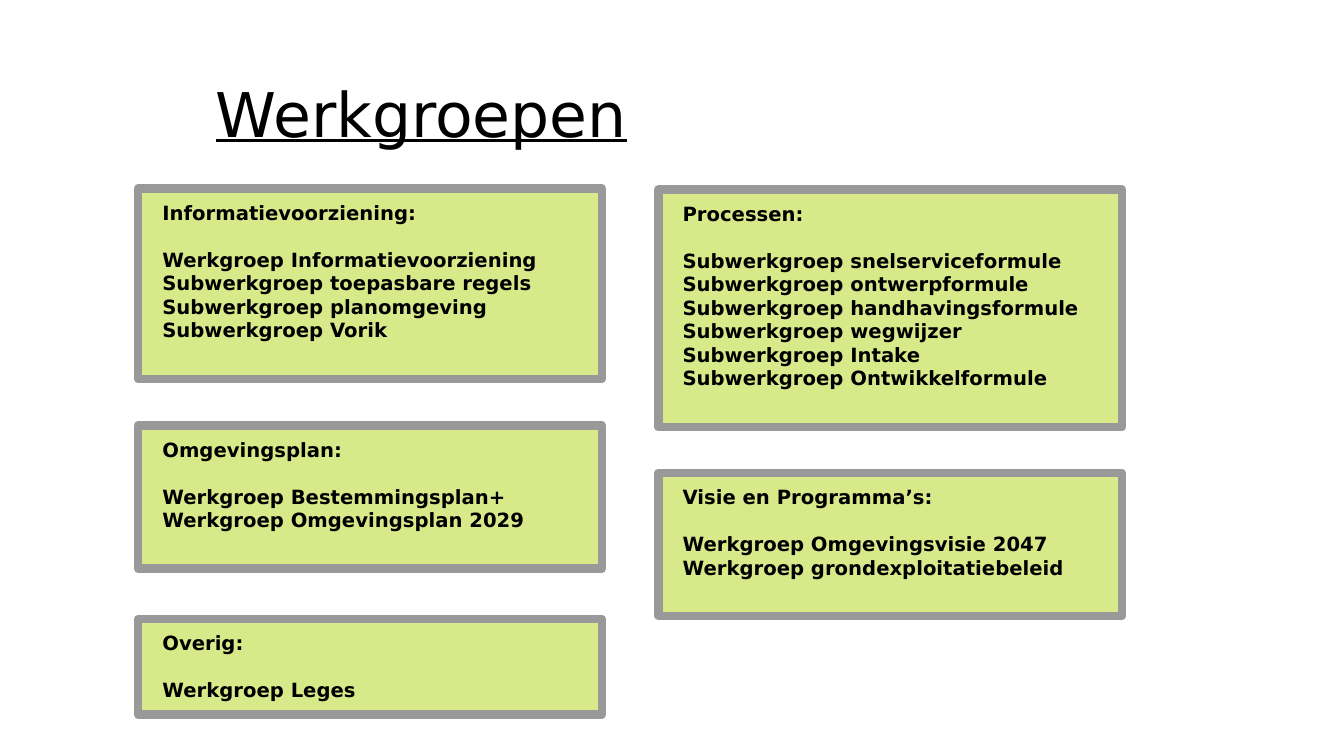
from dataclasses import dataclass

from pptx import Presentation
from pptx.dml.color import RGBColor
from pptx.enum.shapes import MSO_SHAPE
from pptx.enum.text import MSO_ANCHOR, PP_ALIGN
from pptx.util import Emu, Pt


@dataclass(frozen=True)
class Theme:
    font: str = "DejaVu Sans"
    text: RGBColor = RGBColor(0x00, 0x00, 0x00)
    fill: RGBColor = RGBColor(0xD8, 0xE9, 0x89)
    border: RGBColor = RGBColor(0x99, 0x99, 0x99)
    border_width: int = 6
    title_size: int = 44
    body_size: int = 14
    heading_gap: float = 16.8


THEME = Theme()
EMU_PER_PX = 9144
CARD_WIDTH = 460
LEFT_COLUMN, RIGHT_COLUMN = 137, 653

CARDS = [
    (LEFT_COLUMN, 187, 189, "Informatievoorziening:", [
        "Werkgroep Informatievoorziening",
        "Subwerkgroep toepasbare regels",
        "Subwerkgroep planomgeving",
        "Subwerkgroep Vorik",
    ]),
    (RIGHT_COLUMN, 188, 236, "Processen:", [
        "Subwerkgroep snelserviceformule",
        "Subwerkgroep ontwerpformule",
        "Subwerkgroep handhavingsformule",
        "Subwerkgroep wegwijzer",
        "Subwerkgroep Intake",
        "Subwerkgroep Ontwikkelformule",
    ]),
    (LEFT_COLUMN, 422, 142, "Omgevingsplan:", [
        "Werkgroep Bestemmingsplan+",
        "Werkgroep Omgevingsplan 2029",
    ]),
    (RIGHT_COLUMN, 469, 142, "Visie en Programma’s:", [
        "Werkgroep Omgevingsvisie 2047",
        "Werkgroep grondexploitatiebeleid",
    ]),
    (LEFT_COLUMN, 614, 95, "Overig:", ["Werkgroep Leges"]),
]


def px(length):
    return Emu(length * EMU_PER_PX)


def style_paragraph(paragraph, size, bold=False, underline=False):
    paragraph.alignment = PP_ALIGN.LEFT
    font = paragraph.font
    font.name = THEME.font
    font.size = Pt(size)
    font.bold = bold
    font.underline = underline
    font.color.rgb = THEME.text


def place_title(slide, left, top, width, height):
    title = slide.shapes.title
    title.left, title.top = px(left), px(top)
    title.width, title.height = px(width), px(height)
    title.text_frame.text = "Werkgroepen"
    title.text_frame.vertical_anchor = MSO_ANCHOR.MIDDLE
    style_paragraph(title.text_frame.paragraphs[0], THEME.title_size, underline=True)


def add_card(slide, left, top, width, height, heading, groups):
    card = slide.shapes.add_shape(
        MSO_SHAPE.RECTANGLE, px(left), px(top), px(width), px(height))
    card.shadow.inherit = False
    card.fill.solid()
    card.fill.fore_color.rgb = THEME.fill
    card.line.color.rgb = THEME.border
    card.line.width = Pt(THEME.border_width)

    frame = card.text_frame
    frame.word_wrap = True
    frame.vertical_anchor = MSO_ANCHOR.TOP
    frame.margin_left = frame.margin_right = px(24)
    frame.margin_top = frame.margin_bottom = px(12)
    frame.text = "\n".join([heading, *groups])
    for paragraph in frame.paragraphs:
        style_paragraph(paragraph, THEME.body_size, bold=True)
    frame.paragraphs[0].space_after = Pt(THEME.heading_gap)


def main():
    presentation = Presentation()
    presentation.slide_width, presentation.slide_height = px(1333), px(750)
    slide = presentation.slides.add_slide(presentation.slide_layouts[5])
    place_title(slide, 204, 70, 986, 84)
    for left, top, height, heading, groups in CARDS:
        add_card(slide, left, top, CARD_WIDTH, height, heading, groups)
    presentation.save("out.pptx")


if __name__ == "__main__":
    main()
